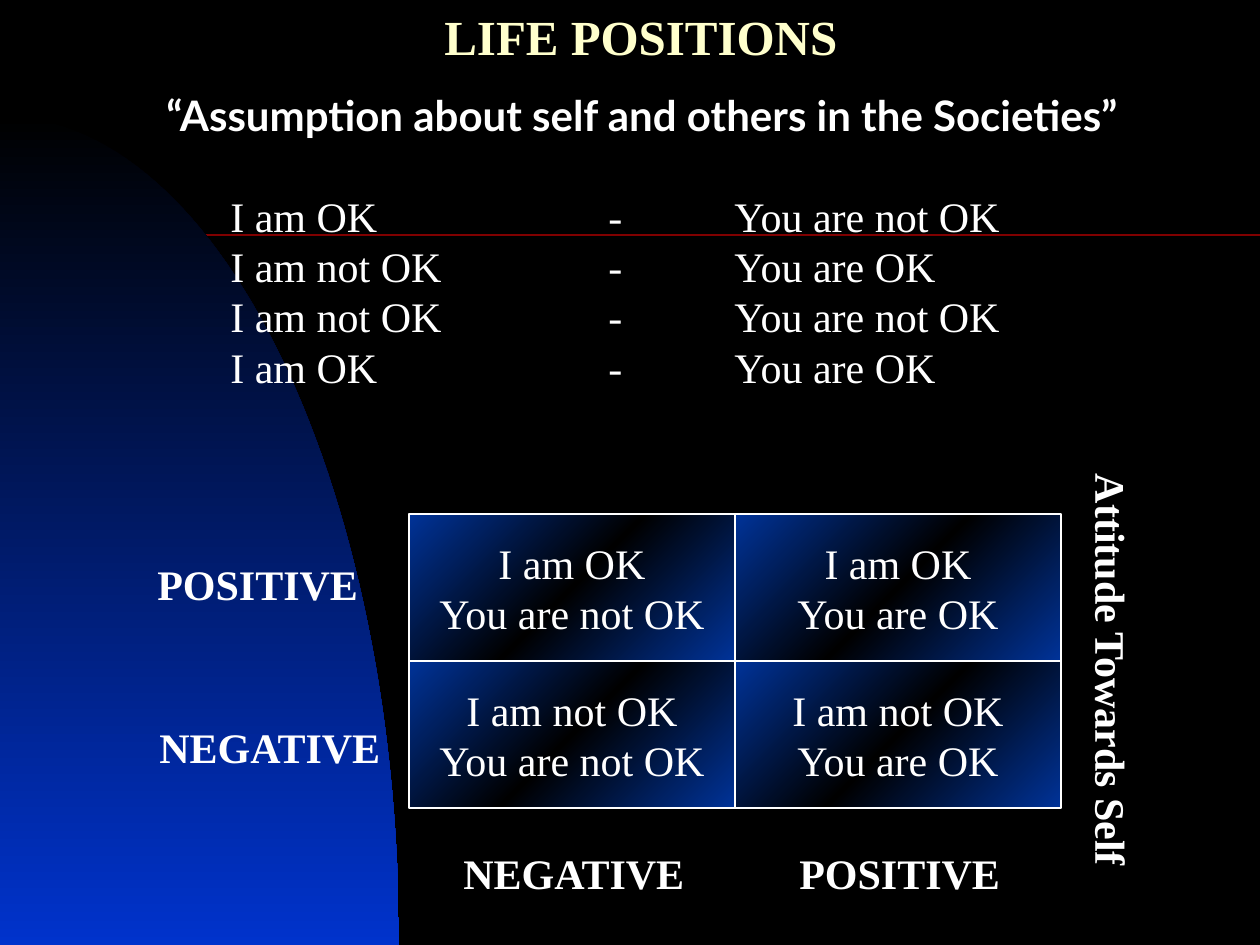
from dataclasses import dataclass

from lxml.etree import SubElement
from pptx import Presentation
from pptx.dml.color import RGBColor
from pptx.enum.shapes import MSO_CONNECTOR, MSO_SHAPE
from pptx.enum.text import MSO_ANCHOR, MSO_AUTO_SIZE, PP_ALIGN
from pptx.oxml.ns import qn
from pptx.util import Pt


@dataclass(frozen=True)
class Theme:
    background: str = "000000"
    title: str = "FFFFCC"
    text: str = "FFFFFF"
    rule: str = "800000"
    swoosh: tuple = ("000000", "0033CC")
    cell: tuple = ("003399", "000000", "003399")
    serif: str = "Times New Roman"
    sans: str = "Lato"
    title_size: int = 28
    body_size: int = 24


T = Theme()
SCALE = 914400 / 126
WIDTH, HEIGHT = 1260, 945

TITLE = "LIFE POSITIONS"
SUBTITLE = "“Assumption about self and others in the Societies”"
POSITIONS = [
    ("I am OK", "You are not OK"),
    ("I am not OK", "You are OK"),
    ("I am not OK", "You are not OK"),
    ("I am OK", "You are OK"),
]
GRID = [
    [("I am OK", "You are not OK"), ("I am OK", "You are OK")],
    [("I am not OK", "You are not OK"), ("I am not OK", "You are OK")],
]
AXIS_LABELS = [
    ("POSITIVE", (145, 552, 227, 63), 0),
    ("NEGATIVE", (147, 715, 249, 63), 0),
    ("NEGATIVE", (451, 841, 249, 63), 0),
    ("POSITIVE", (787, 841, 227, 63), 0),
    ("Attitude Towards Self", (901, 641, 422, 63), 90),
]
GRID_LEFT, GRID_TOP, CELL_W, CELL_H = 409, 514, 326, 147
TAB_STOPS = (252, 378, 504)
CURVE = ((0, 116), (220, 116), (399, 488), (399, 945))
CURVE_STEPS = 60


def px(value):
    return round(value * SCALE)


def rgb(value):
    return RGBColor.from_string(value)


def write(tf, lines, size=T.body_size, font=T.serif, color=T.text,
          bold=False, align=PP_ALIGN.LEFT, tabs=()):
    for i, line in enumerate(lines):
        p = tf.paragraphs[0] if i == 0 else tf.add_paragraph()
        p.alignment = align
        if tabs:
            tab_list = SubElement(p._p.get_or_add_pPr(), qn("a:tabLst"))
            for stop in tabs:
                SubElement(tab_list, qn("a:tab"), pos=str(px(stop)), algn="l")
        r = p.add_run()
        r.text = line
        r.font.size = Pt(size)
        r.font.name = font
        r.font.bold = bold
        r.font.color.rgb = rgb(color)


def add_text(s, box, lines, wrap=False, rotation=0, **style):
    sp = s.shapes.add_textbox(*map(px, box))
    sp.rotation = rotation
    tf = sp.text_frame
    tf.word_wrap = wrap
    tf.auto_size = MSO_AUTO_SIZE.SHAPE_TO_FIT_TEXT
    write(tf, lines, **style)


def fill_gradient(sp, colors, angle):
    sp.fill.gradient()
    sp.fill.gradient_angle = 360 - angle
    stops = sp._element.spPr.find(qn("a:gradFill")).find(qn("a:gsLst"))
    for stop in list(stops):
        stops.remove(stop)
    for i, color in enumerate(colors):
        position = 100000 * i // (len(colors) - 1)
        stop = SubElement(stops, qn("a:gs"), pos=str(position))
        SubElement(stop, qn("a:srgbClr"), val=color)


def curve_point(t):
    weights = ((1 - t) ** 3, 3 * t * (1 - t) ** 2, 3 * t ** 2 * (1 - t), t ** 3)
    return tuple(px(sum(w * point[axis] for w, point in zip(weights, CURVE)))
                 for axis in (0, 1))


def add_backdrop(s):
    s.background.fill.solid()
    s.background.fill.fore_color.rgb = rgb(T.background)
    rule = s.shapes.add_connector(
        MSO_CONNECTOR.STRAIGHT, 0, px(235), px(WIDTH), px(235))
    rule.line.color.rgb = rgb(T.rule)
    rule.line.width = Pt(1)
    SubElement(rule._element.spPr, qn("a:effectLst"))

    points = [curve_point(i / CURVE_STEPS) for i in range(CURVE_STEPS + 1)]
    builder = s.shapes.build_freeform(*points[0])
    builder.add_line_segments(points[1:] + [(0, px(HEIGHT))], close=True)
    swoosh = builder.convert_to_shape()
    swoosh.shadow.inherit = False
    swoosh.line.fill.background()
    fill_gradient(swoosh, T.swoosh, 90)


def add_cell(s, row, col, lines):
    sp = s.shapes.add_shape(
        MSO_SHAPE.RECTANGLE, px(GRID_LEFT + col * CELL_W),
        px(GRID_TOP + row * CELL_H), px(CELL_W), px(CELL_H))
    sp.shadow.inherit = False
    fill_gradient(sp, T.cell, 45)
    sp.line.color.rgb = rgb(T.text)
    sp.line.width = Pt(0.75)
    tf = sp.text_frame
    tf.word_wrap = False
    tf.vertical_anchor = MSO_ANCHOR.MIDDLE
    write(tf, lines, align=PP_ALIGN.CENTER)


def main():
    prs = Presentation()
    prs.slide_width, prs.slide_height = px(WIDTH), px(HEIGHT)
    s = prs.slides.add_slide(prs.slide_layouts[6])
    add_backdrop(s)
    add_text(s, (432, 0, 418, 72), [TITLE], size=T.title_size,
             color=T.title, bold=True)
    add_text(s, (87, 83, 1110, 63), [SUBTITLE], font=T.sans, bold=True,
             align=PP_ALIGN.CENTER)
    add_text(s, (218, 184, 799, 265),
             [f"{me}\t\t-\t{you}" for me, you in POSITIONS],
             wrap=True, tabs=TAB_STOPS)
    for row, cells in enumerate(GRID):
        for col, lines in enumerate(cells):
            add_cell(s, row, col, lines)
    for label, box, rotation in AXIS_LABELS:
        add_text(s, box, [label], rotation=rotation, bold=True)
    prs.save("out.pptx")


if __name__ == "__main__":
    main()
